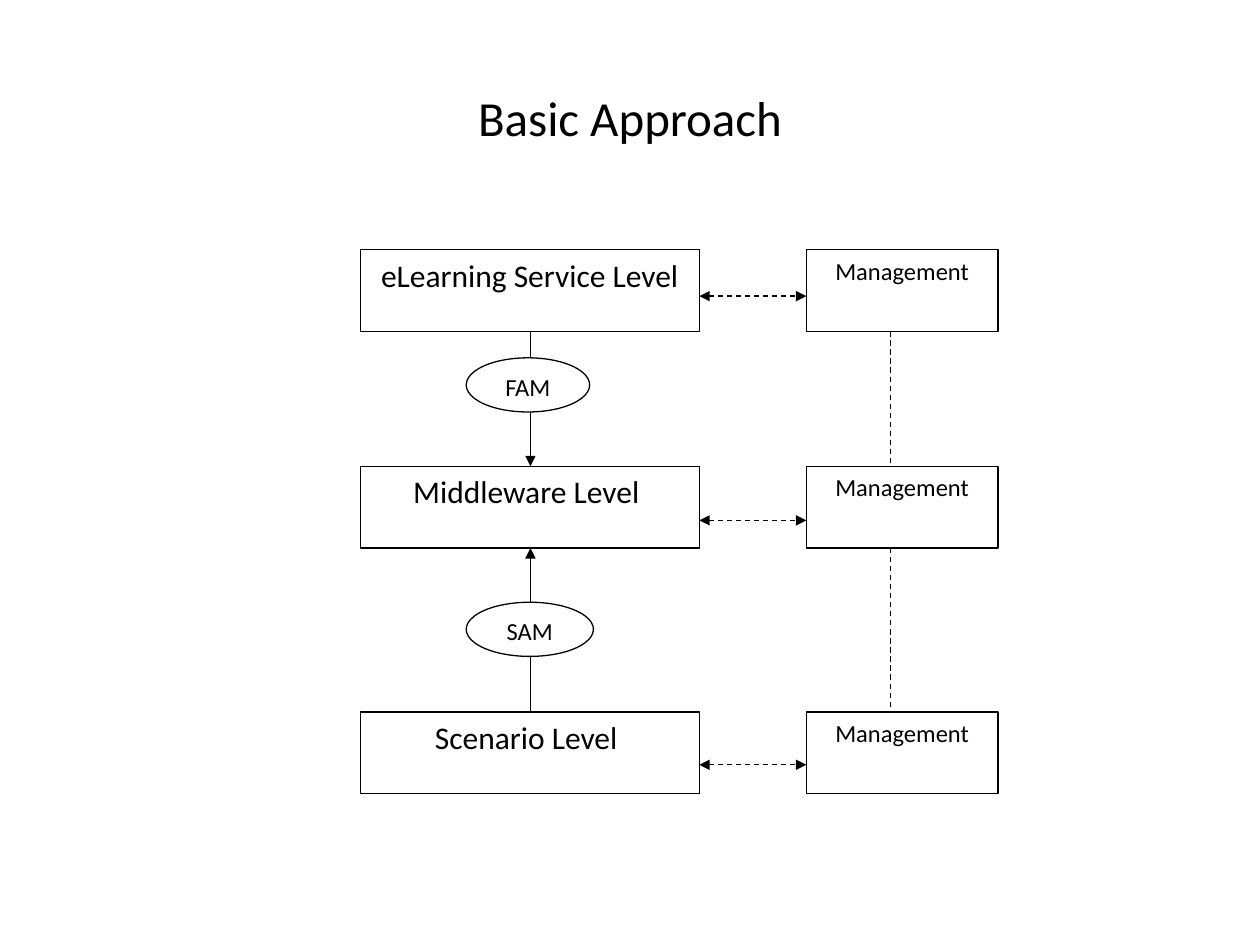
from dataclasses import dataclass

from lxml.etree import SubElement
from pptx import Presentation
from pptx.dml.color import RGBColor
from pptx.enum.dml import MSO_LINE
from pptx.enum.shapes import MSO_CONNECTOR, MSO_SHAPE
from pptx.enum.text import MSO_ANCHOR as Anchor, PP_ALIGN as Align
from pptx.oxml.ns import qn
from pptx.util import Inches, Pt

BLACK, WHITE = "000000", "FFFFFF"
FONT = "Calibri"
LEVEL_LEFT, LEVEL_WIDTH = 2.86, 2.69
MANAGEMENT_LEFT, MANAGEMENT_WIDTH = 6.4, 1.52
BOX_HEIGHT = 0.65
MAPPING_LEFT, MAPPING_HEIGHT = 3.7, 0.43
FLOW_X, MANAGEMENT_X = 4.21, 7.07


@dataclass
class Level:
    label: str
    top: float
    link_y: float


@dataclass
class Mapping:
    label: str
    top: float
    width: float
    head: bool = False
    tail: bool = False


LEVELS = [
    Level("eLearning Service Level", 1.98, 2.35),
    Level("Middleware Level ", 3.7, 4.13),
    Level("Scenario Level ", 5.65, 6.07),
]
# Each mapping sits between two neighbouring levels
MAPPINGS = [
    Mapping("FAM", 2.84, 0.98, tail=True),
    Mapping("SAM", 4.78, 1.01, head=True),
]


def color(value: str) -> RGBColor:
    return RGBColor.from_string(value)


def write(shape, text: str, *, size: float, anchor=Anchor.TOP) -> None:
    frame = shape.text_frame
    frame.word_wrap = True
    frame.vertical_anchor = anchor
    paragraph = frame.paragraphs[0]
    paragraph.alignment = Align.CENTER
    run = paragraph.add_run()
    run.text = text
    run.font.name = FONT
    run.font.size = Pt(size)
    run.font.color.rgb = color(BLACK)


def add_node(slide, kind, left: float, top: float, width: float,
             height: float, label: str, size: float) -> None:
    node = slide.shapes.add_shape(
        kind, Inches(left), Inches(top), Inches(width), Inches(height))
    node.shadow.inherit = False
    node.fill.solid()
    node.fill.fore_color.rgb = color(WHITE)
    node.line.color.rgb = color(BLACK)
    node.line.width = Pt(0.75)
    write(node, label, size=size)


def add_line(slide, x1: float, y1: float, x2: float, y2: float, *,
             dashed: bool = False, head: bool = False,
             tail: bool = False) -> None:
    connector = slide.shapes.add_connector(
        MSO_CONNECTOR.STRAIGHT, Inches(x1), Inches(y1), Inches(x2), Inches(y2))
    connector.line.color.rgb = color(BLACK)
    connector.line.width = Pt(0.75)
    if dashed:
        connector.line.dash_style = MSO_LINE.DASH
    properties = connector._element.spPr
    outline = properties.find(qn("a:ln"))
    for tag, shown in (("a:headEnd", head), ("a:tailEnd", tail)):
        if shown:
            SubElement(outline, qn(tag), type="triangle")
    SubElement(properties, qn("a:effectLst"))


def main() -> None:
    deck = Presentation()
    deck.slide_width, deck.slide_height = Inches(10), Inches(7.5)
    slide = deck.slides.add_slide(deck.slide_layouts[6])

    # Title
    title = slide.shapes.add_textbox(
        Inches(0.5), Inches(0.3), Inches(9), Inches(1.25))
    write(title, "Basic Approach", size=28, anchor=Anchor.MIDDLE)

    # Levels and their management boxes
    for level in LEVELS:
        add_node(slide, MSO_SHAPE.RECTANGLE, LEVEL_LEFT, level.top,
                 LEVEL_WIDTH, BOX_HEIGHT, level.label, 18)
        add_node(slide, MSO_SHAPE.RECTANGLE, MANAGEMENT_LEFT, level.top,
                 MANAGEMENT_WIDTH, BOX_HEIGHT, "Management", 14)
        add_line(slide, LEVEL_LEFT + LEVEL_WIDTH, level.link_y,
                 MANAGEMENT_LEFT, level.link_y,
                 dashed=True, head=True, tail=True)

    # Flows between levels, with the mappings on top
    for upper, lower, mapping in zip(LEVELS, LEVELS[1:], MAPPINGS):
        start = upper.top + BOX_HEIGHT
        add_line(slide, FLOW_X, start, FLOW_X, lower.top,
                 head=mapping.head, tail=mapping.tail)
        add_line(slide, MANAGEMENT_X, start, MANAGEMENT_X, lower.top,
                 dashed=True)
        add_node(slide, MSO_SHAPE.OVAL, MAPPING_LEFT, mapping.top,
                 mapping.width, MAPPING_HEIGHT, mapping.label, 14)

    deck.save("out.pptx")


if __name__ == "__main__":
    main()
